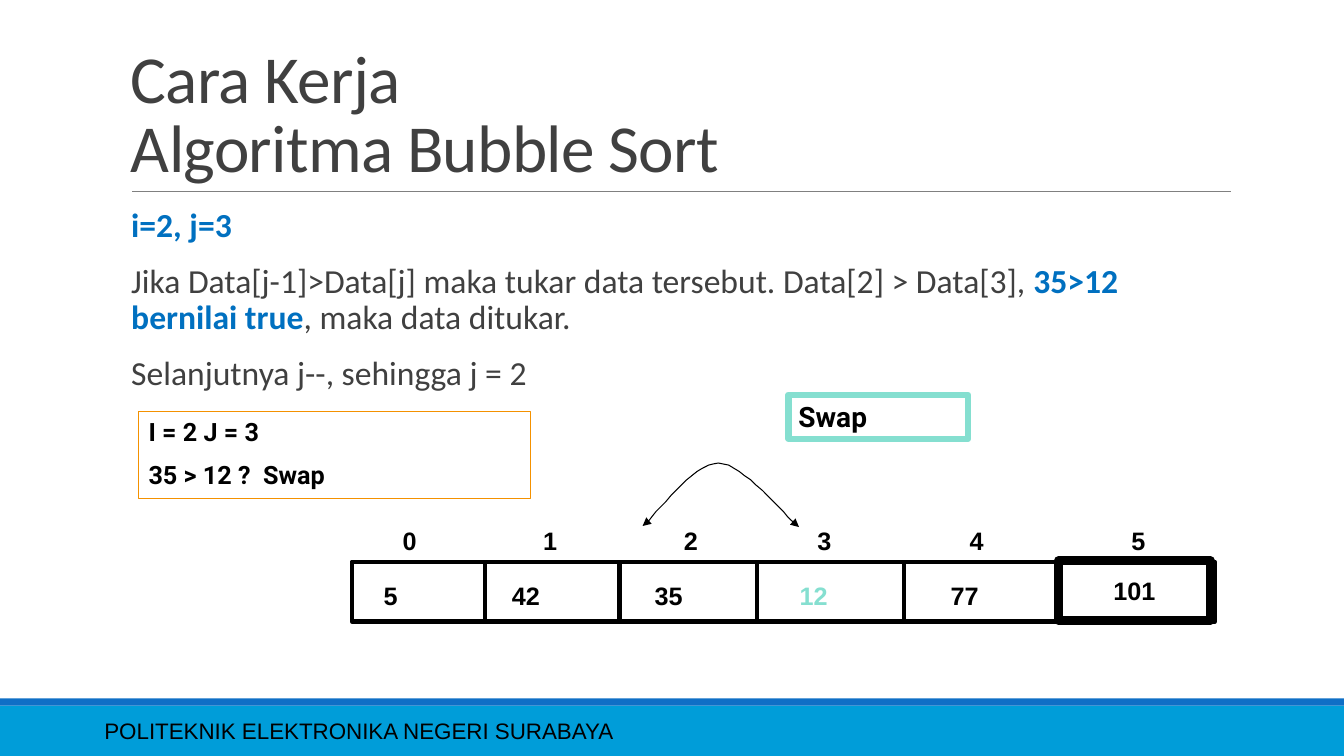
from lxml import etree
from pptx import Presentation
from pptx.dml.color import RGBColor
from pptx.enum.shapes import MSO_CONNECTOR, MSO_SHAPE
from pptx.enum.text import MSO_ANCHOR, MSO_AUTO_SIZE, PP_ALIGN
from pptx.oxml.ns import qn
from pptx.util import Pt

PX = 9525
STRAIGHT = MSO_CONNECTOR.STRAIGHT
RECTANGLE = MSO_SHAPE.RECTANGLE
TOP, MIDDLE, BOTTOM = MSO_ANCHOR.TOP, MSO_ANCHOR.MIDDLE, MSO_ANCHOR.BOTTOM
LEFT, CENTER = PP_ALIGN.LEFT, PP_ALIGN.CENTER
NO_AUTOFIT = MSO_AUTO_SIZE.NONE

BLACK, GRAY, BLUE, MINT = "000000", "404040", "0070C0", "85DFD0"


def color(value):
    return RGBColor.from_string(value)


def emu(*lengths):
    return [length * PX for length in lengths]


def style_font(font, name, size, value, bold=False):
    font.name, font.size, font.bold = name, Pt(size), bold
    font.color.rgb = color(value)


def add_rectangle(slide, box, fill=None, line=None, weight=1):
    shape = slide.shapes.add_shape(RECTANGLE, *emu(*box))
    shape.shadow.inherit = False
    if fill:
        shape.fill.solid()
        shape.fill.fore_color.rgb = color(fill)
    else:
        shape.fill.background()
    if line:
        shape.line.color.rgb = color(line)
        shape.line.width = Pt(weight)
    else:
        shape.line.fill.background()
    return shape


def add_line(slide, ends, value, weight):
    connector = slide.shapes.add_connector(STRAIGHT, *emu(*ends))
    connector.line.color.rgb = color(value)
    connector.line.width = Pt(weight)
    etree.SubElement(connector._element.spPr, qn("a:effectLst"))


def write_lines(shape, lines, name, size, bold=True, anchor=TOP, align=LEFT,
                value=BLACK, gap=0, wrap=True):
    frame = shape.text_frame
    frame.word_wrap = wrap
    frame.vertical_anchor = anchor
    for index, line in enumerate(lines):
        paragraph = frame.paragraphs[0] if index == 0 else frame.add_paragraph()
        paragraph.text = line
        paragraph.alignment = align
        if index:
            paragraph.space_before = Pt(gap)
        style_font(paragraph.font, name, size, value, bold)


def add_text(slide, box, text, size, **options):
    shape = slide.shapes.add_textbox(*emu(*box))
    write_lines(shape, [text], "Arial", size, **options)
    return shape


def add_footer(slide, left, top, width, height):
    add_rectangle(slide, (left, top + 7, width, height - 7), fill="009DD9")
    add_rectangle(slide, (left, top, width, 7), fill="0F6FC6")
    add_text(slide, (left + 90, top + 12, 807, 38),
             "POLITEKNIK ELEKTRONIKA NEGERI SURABAYA", 16,
             bold=False, anchor=MIDDLE)


def add_title(slide, left, top, width, height):
    title = slide.shapes.title
    title.left, title.top, title.width, title.height = emu(left, top, width, height)
    frame = title.text_frame
    frame.auto_size = NO_AUTOFIT
    frame.vertical_anchor = BOTTOM
    paragraph = frame.paragraphs[0]
    paragraph.text = "Cara Kerja\vAlgoritma Bubble Sort"
    paragraph.alignment = LEFT
    paragraph.line_spacing = 0.85
    style_font(paragraph.font, "Calibri", 48, GRAY)
    for run in paragraph.runs:
        run.font._element.set("spc", "-50")
    add_line(slide, (left + 11, top + height, left + width + 1, top + height), "808080", 0.5)


def add_explanation(slide, left, top, width, height):
    paragraphs = [
        [("i=2, j=3", True)],
        [("Jika Data[j-1]>Data[j] maka tukar data tersebut. Data[2] > Data[3], ", False),
         ("35>12 bernilai true", True),
         (", maka data ditukar.", False)],
        [("Selanjutnya j--, sehingga j = 2", False)],
    ]
    frame = slide.shapes.add_textbox(*emu(left, top, width, height)).text_frame
    frame.word_wrap = True
    frame.margin_left = frame.margin_right = 0
    for index, parts in enumerate(paragraphs):
        paragraph = frame.paragraphs[0] if index == 0 else frame.add_paragraph()
        paragraph.line_spacing = 0.9
        paragraph.space_after = Pt(2)
        if index:
            paragraph.space_before = Pt(12)
        for text, strong in parts:
            run = paragraph.add_run()
            run.text = text
            style_font(run.font, "Calibri", 24, BLUE if strong else GRAY, strong)


def add_note(slide, box, lines, size, line, weight):
    shape = add_rectangle(slide, box, line=line, weight=weight)
    write_lines(shape, lines, "Roboto", size, gap=size / 2)


def curve_points(start, control_a, control_b, end, steps=16):
    for step in range(steps + 1):
        t = step / steps
        u = 1 - t
        yield tuple(u ** 3 * a + 3 * u * u * t * b + 3 * u * t * t * c + t ** 3 * d
                    for a, b, c, d in zip(start, control_a, control_b, end))


def add_swap_arrow(slide, left, top, width, height):
    right, bottom, peak = left + width, top + height, left + 72
    rise = curve_points((left, bottom - 1), (left + 12, bottom - 11),
                        (peak - 24, top), (peak, top))
    fall = curve_points((peak, top), (peak + 24, top),
                        (right - 16, bottom - 13), (right, bottom))
    points = [*rise, *list(fall)[1:]]
    builder = slide.shapes.build_freeform(*points[0], scale=PX)
    builder.add_line_segments(points[1:], close=False)
    arrow = builder.convert_to_shape()
    arrow.shadow.inherit = False
    arrow.fill.background()
    arrow.line.color.rgb = color(BLACK)
    arrow.line.width = Pt(0.75)
    for end in ("a:headEnd", "a:tailEnd"):
        etree.SubElement(arrow.line._get_or_add_ln(), qn(end), type="triangle")


def add_array(slide, left, top, width, height):
    add_rectangle(slide, (left, top, width, height), line=BLACK, weight=3)
    for offset in (127, 255, 386, 526, 671):
        add_line(slide, (left + offset, top, left + offset, top + height), BLACK, 3)
    values = [("5", 21, BLACK), ("42", 143, BLACK), ("35", 279, BLACK),
              ("12", 417, MINT), ("77", 561, BLACK)]
    for text, offset, value in values:
        add_text(slide, (left + offset, top + 13, 46, 39), text, 18,
                 value=value, wrap=False)
    sorted_cell = add_rectangle(slide, (left + 673, top - 1, 145, 57), line=BLACK, weight=6)
    write_lines(sorted_cell, ["101"], "Arial", 18, anchor=MIDDLE, align=CENTER, wrap=False)

    indexes = add_text(slide, (left + 39, top - 39, 741, 39), "\t".join("012345"), 18)
    properties = indexes.text_frame.paragraphs[0]._p.get_or_add_pPr()
    tabs = etree.Element(qn("a:tabLst"))
    properties.insert(0, tabs)
    for stop in (134, 268, 395, 540, 694):
        etree.SubElement(tabs, qn("a:tab"), pos=str(stop * PX), algn="l")


def build_slide(presentation):
    slide = presentation.slides.add_slide(presentation.slide_layouts[5])
    add_footer(slide, 0, 665, 1280, 55)
    add_title(slide, 115, 30, 1056, 152)
    add_explanation(slide, 125, 194, 1046, 422)
    add_swap_arrow(slide, 612, 441, 149, 61)
    add_array(slide, 335, 535, 822, 57)
    add_note(slide, (132, 392, 373, 83), ["I = 2 J = 3", "35 > 12 ?  Swap"], 18, "F49100", 0.75)
    add_note(slide, (751, 376, 171, 42), ["Swap"], 20, MINT, 4.5)


def main():
    presentation = Presentation()
    presentation.slide_width, presentation.slide_height = emu(1280, 720)
    build_slide(presentation)
    presentation.save("out.pptx")


if __name__ == "__main__":
    main()
